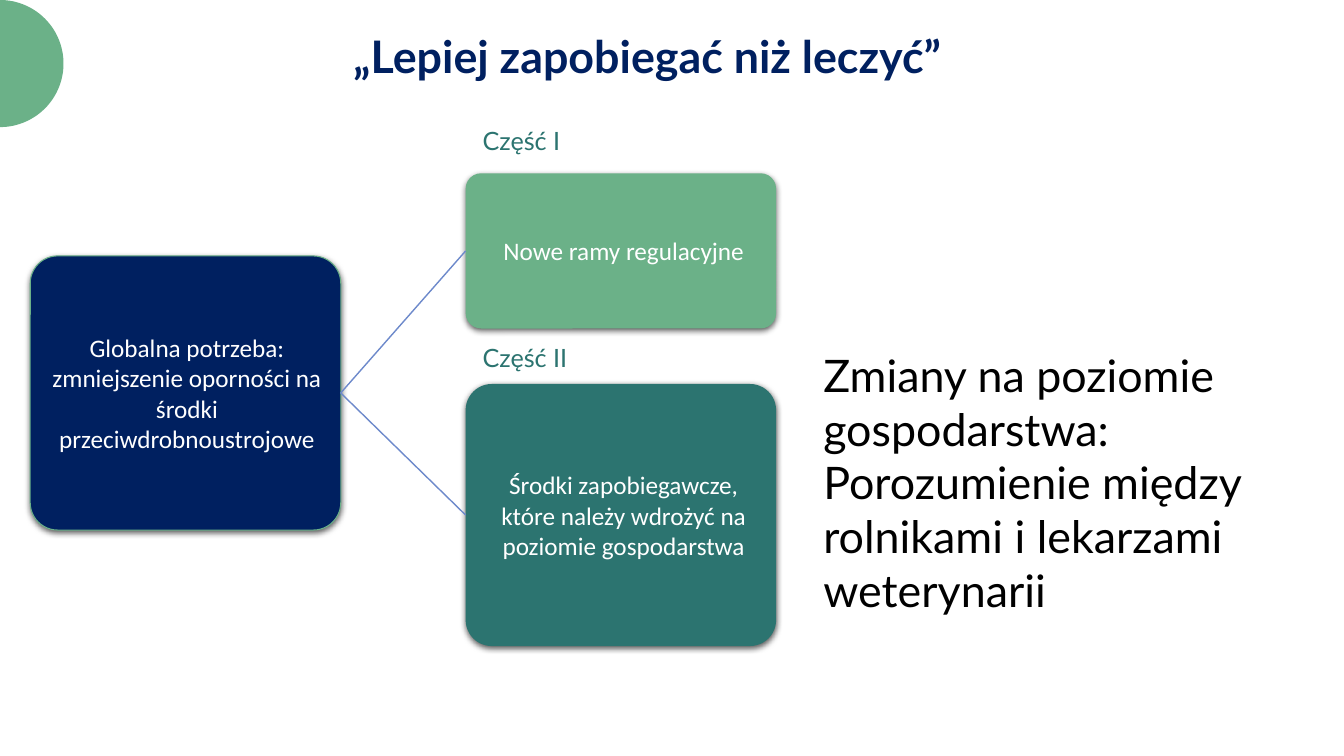
from math import cos, pi, sin

from lxml.etree import SubElement
from pptx import Presentation
from pptx.dml.color import RGBColor
from pptx.enum.shapes import MSO_CONNECTOR, MSO_SHAPE
from pptx.enum.text import MSO_ANCHOR, PP_ALIGN
from pptx.oxml.ns import qn
from pptx.util import Pt

NAVY, GREEN, TEAL = "002060", "6BB188", "2C7470"
WHITE, BLACK, LINK_BLUE = "FFFFFF", "000000", "6D89CB"
LEFT_SITE, RIGHT_SITE = 1, 3


def color(code):
    return RGBColor.from_string(code)


def write_text(frame, text, size, code, font="Lato", bold=False, align=PP_ALIGN.LEFT):
    frame.word_wrap = True
    para = frame.paragraphs[0]
    para.text = text
    para.alignment = align
    para.font.name = font
    para.font.size = Pt(size)
    para.font.bold = bold
    para.font.color.rgb = color(code)


def add_label(page, box, text, size, code):
    label = page.shapes.add_textbox(*map(Pt, box))
    write_text(label.text_frame, text, size, code)


def add_shadow(shape):
    shape.shadow.inherit = False
    effects = shape._element.spPr.find(qn("a:effectLst"))
    shadow = SubElement(effects, qn("a:outerShdw"), blurRad=str(Pt(4.5)),
                        dist=str(Pt(1.5)), dir="5400000", rotWithShape="0")
    shade = SubElement(shadow, qn("a:srgbClr"), val=BLACK)
    SubElement(shade, qn("a:alpha"), val="63000")


def add_card(page, box, text, fill, insets, outline=None):
    card = page.shapes.add_shape(MSO_SHAPE.ROUNDED_RECTANGLE, *map(Pt, box))
    card.adjustments[0] = 0.1
    card.fill.solid()
    card.fill.fore_color.rgb = color(fill)
    if outline:
        card.line.color.rgb = color(outline)
        card.line.width = Pt(0.75)
    else:
        card.line.fill.background()
    add_shadow(card)
    frame = card.text_frame
    frame.margin_left, frame.margin_right = map(Pt, insets)
    frame.margin_top = frame.margin_bottom = 0
    frame.vertical_anchor = MSO_ANCHOR.MIDDLE
    write_text(frame, text, 18, WHITE, font="Calibri", align=PP_ALIGN.CENTER)
    return card


def add_link(page, need, part):
    link = page.shapes.add_connector(MSO_CONNECTOR.STRAIGHT, 0, 0, 0, 0)
    link.begin_connect(need, RIGHT_SITE)
    link.end_connect(part, LEFT_SITE)
    link.line.color.rgb = color(LINK_BLUE)
    link.line.width = Pt(1)
    SubElement(link._element.spPr, qn("a:effectLst"))


def add_half_disc(page, left, top, radius, steps=60):
    angles = [pi * step / steps - pi / 2 for step in range(steps + 1)]
    points = [(Pt(left + radius * cos(angle)), Pt(top + radius + radius * sin(angle)))
              for angle in angles]
    builder = page.shapes.build_freeform(*points[0])
    builder.add_line_segments(points[1:], close=True)
    disc = builder.convert_to_shape()
    disc.fill.solid()
    disc.fill.fore_color.rgb = color(GREEN)
    disc.line.fill.background()
    disc.shadow.inherit = False


def add_title(page, box, text):
    title = page.shapes.title
    title.left, title.top, title.width, title.height = map(Pt, box)
    title.text_frame.vertical_anchor = MSO_ANCHOR.MIDDLE
    write_text(title.text_frame, text, 32, NAVY, bold=True, align=PP_ALIGN.CENTER)


def add_diagram(page, left, top):
    card_width, branch_left = 221.8, left + 311
    need = add_card(
        page, (left, top + 59, card_width, 195.8),
        "Globalna potrzeba: zmniejszenie oporności na środki przeciwdrobnoustrojowe",
        NAVY, (7, 5), GREEN)
    branches = [
        ("Część I", 37.5, 0, 110.9, GREEN, "Nowe ramy regulacyjne"),
        ("Część II", 33, 150.5, 187.2, TEAL,
         "Środki zapobiegawcze, które należy wdrożyć na poziomie gospodarstwa"),
    ]
    for heading, rise, offset, height, fill, text in branches:
        part_top = top + offset
        part = add_card(page, (branch_left, part_top, card_width, height),
                        text, fill, (16, 12))
        add_link(page, need, part)
        add_label(page, (branch_left + 5, part_top - rise, 78, 29), heading, 18, TEAL)


def build_slide(deck):
    page = deck.slides.add_slide(deck.slide_layouts[5])
    add_half_disc(page, 0, 0, 45.4)
    add_title(page, (12.2, 16.6, 900.7, 46), "„Lepiej zapobiegać niż leczyć”")
    add_diagram(page, 21.6, 123.8)
    add_label(
        page, (581, 244.8, 332.6, 162.7),
        "Zmiany na poziomie gospodarstwa: Porozumienie między rolnikami "
        "i lekarzami weterynarii", 32, BLACK)


def main():
    deck = Presentation()
    deck.slide_width, deck.slide_height = Pt(960), Pt(540)
    build_slide(deck)
    deck.save("out.pptx")


if __name__ == "__main__":
    main()
